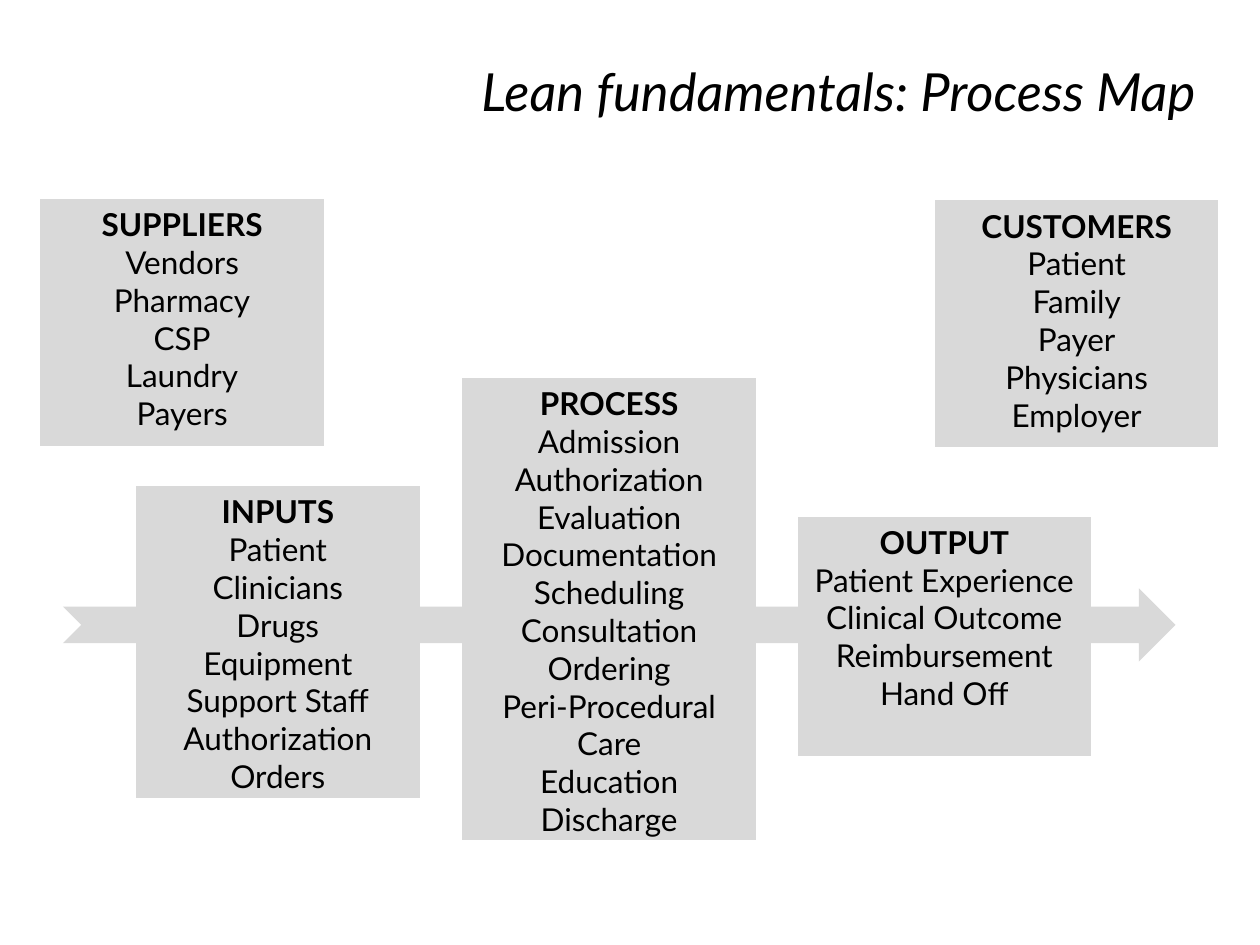
from typing import NamedTuple

from pptx import Presentation
from pptx.dml.color import RGBColor
from pptx.enum.shapes import MSO_SHAPE
from pptx.enum.text import MSO_ANCHOR, PP_ALIGN
from pptx.util import Inches, Pt

PROCESS_BOX = MSO_SHAPE.FLOWCHART_PROCESS
FLOW_ARROW = MSO_SHAPE.NOTCHED_RIGHT_ARROW
TOP, MIDDLE = MSO_ANCHOR.TOP, MSO_ANCHOR.MIDDLE
CENTER, RIGHT = PP_ALIGN.CENTER, PP_ALIGN.RIGHT
FONT, BLACK, GREY = "Lato", "000000", "D9D9D9"


class Area(NamedTuple):
    left: float
    top: float
    width: float
    height: float


class Stage(NamedTuple):
    heading: str
    items: list[str]
    area: Area


STAGES = [
    Stage("INPUTS",
          ["Patient", "Clinicians", "Drugs", "Equipment", "Support Staff",
           "Authorization", "Orders"],
          Area(1.08, 3.86, 2.25, 2.47)),
    Stage("PROCESS",
          ["Admission", "Authorization", "Evaluation", "Documentation",
           "Scheduling", "Consultation", "Ordering", "Peri-Procedural Care",
           "Education", "Discharge"],
          Area(3.67, 3, 2.33, 3.67)),
    Stage("OUTPUT",
          ["Patient Experience", "Clinical Outcome", "Reimbursement", "Hand Off"],
          Area(6.33, 4.1, 2.33, 1.9)),
    Stage("SUPPLIERS",
          ["Vendors", "Pharmacy", "CSP", "Laundry", "Payers"],
          Area(0.32, 1.58, 2.25, 1.96)),
    Stage("CUSTOMERS",
          ["Patient", "Family", "Payer", "Physicians", "Employer"],
          Area(7.42, 1.59, 2.25, 1.96)),
]


def color(value: str) -> RGBColor:
    return RGBColor.from_string(value)


def format_paragraph(paragraph, size: float, align: PP_ALIGN,
                     bold: bool = False, italic: bool = False) -> None:
    paragraph.alignment = align
    font = paragraph.font
    font.name, font.size = FONT, Pt(size)
    font.bold, font.italic = bold, italic
    font.color.rgb = color(BLACK)


def add_grey_shape(slide, kind: MSO_SHAPE, area: Area):
    shape = slide.shapes.add_shape(kind, *map(Inches, area))
    shape.shadow.inherit = False
    shape.fill.solid()
    shape.fill.fore_color.rgb = color(GREY)
    shape.line.fill.background()
    return shape


def add_stage(slide, stage: Stage) -> None:
    frame = add_grey_shape(slide, PROCESS_BOX, stage.area).text_frame
    frame.word_wrap = True
    frame.vertical_anchor = TOP
    frame.text = "\n".join([stage.heading, *stage.items])
    for index, paragraph in enumerate(frame.paragraphs):
        format_paragraph(paragraph, 18, CENTER, bold=index == 0)


def add_title(slide, text: str, area: Area) -> None:
    title = slide.shapes.title
    title.left, title.top, title.width, title.height = map(Inches, area)
    title.text_frame.text = text
    title.text_frame.vertical_anchor = MIDDLE
    format_paragraph(title.text_frame.paragraphs[0], 30, RIGHT, italic=True)


def main() -> None:
    deck = Presentation()
    deck.slide_width, deck.slide_height = Inches(10), Inches(7.5)
    slide = deck.slides.add_slide(deck.slide_layouts[5])

    add_title(slide, "Lean fundamentals: Process Map", Area(0.81, 0, 8.78, 1.43))

    # The arrow runs behind the stages
    add_grey_shape(slide, FLOW_ARROW, Area(0.5, 4.67, 8.83, 0.58))
    for stage in STAGES:
        add_stage(slide, stage)

    deck.save("out.pptx")


if __name__ == "__main__":
    main()
